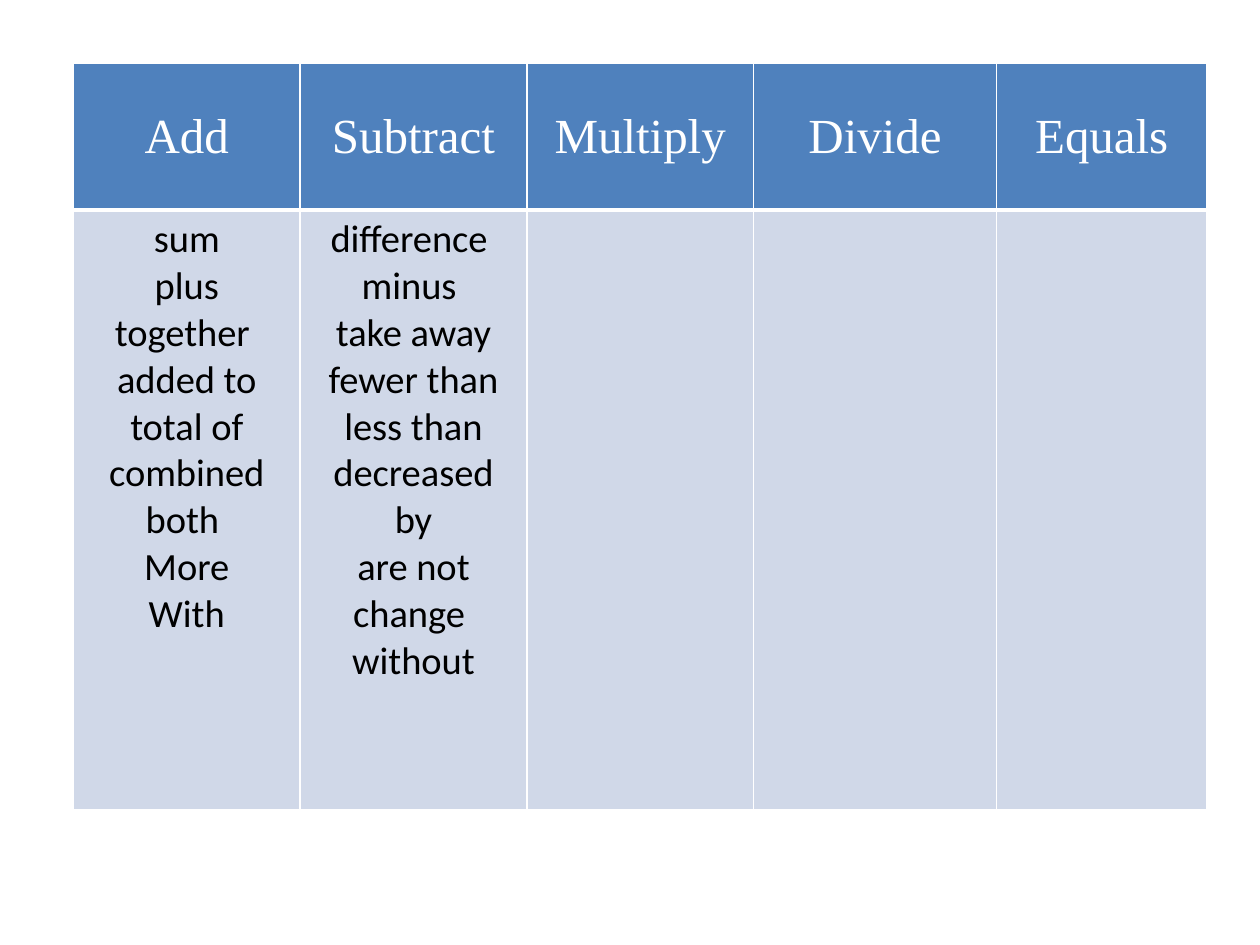
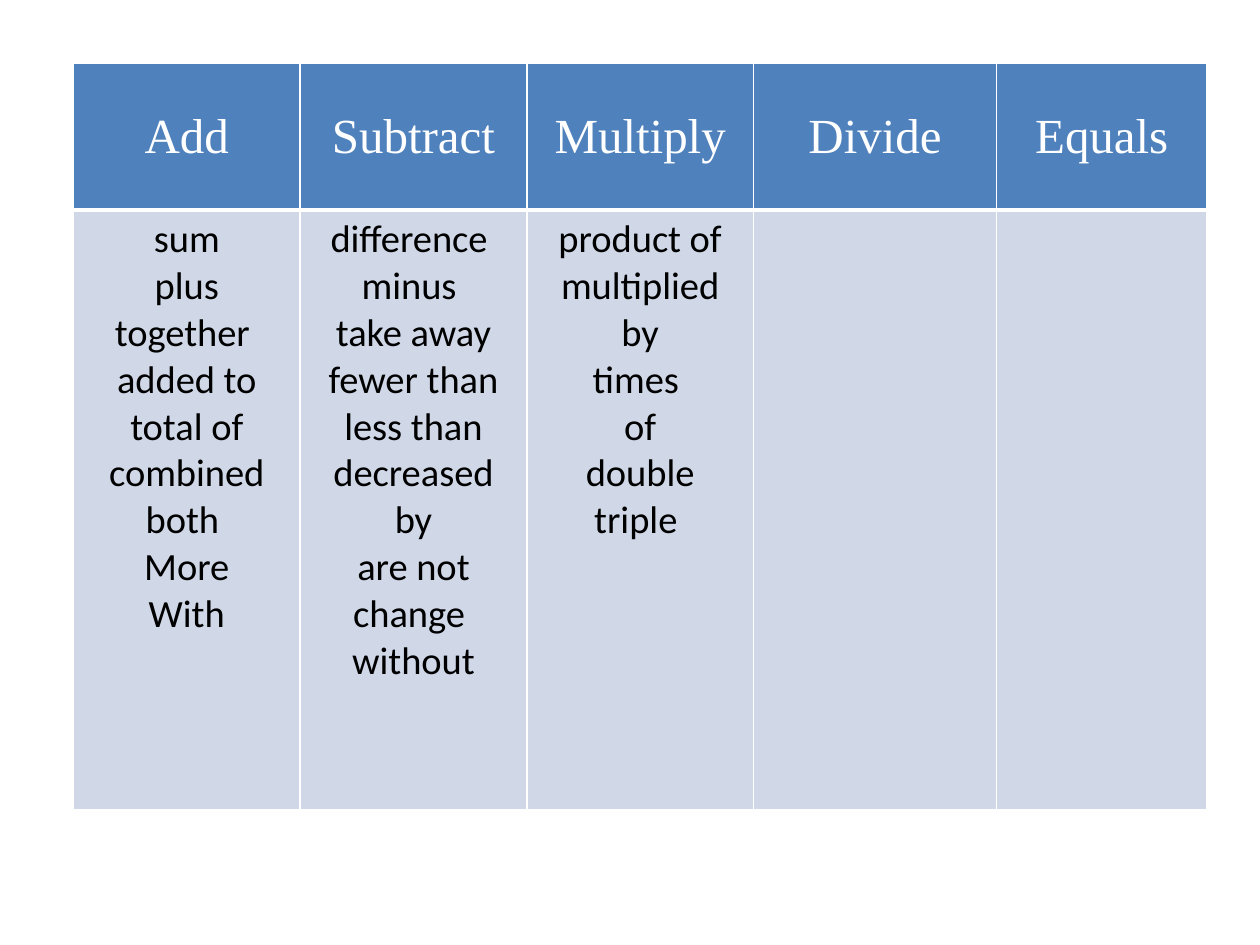
from dataclasses import dataclass

from lxml import etree
from pptx import Presentation
from pptx.dml.color import RGBColor
from pptx.enum.text import MSO_ANCHOR, PP_ALIGN
from pptx.oxml.ns import qn
from pptx.util import Cm, Pt

CENTER = PP_ALIGN.CENTER
TOP = MSO_ANCHOR.TOP
MIDDLE = MSO_ANCHOR.MIDDLE

WHITE = "FFFFFF"
BLACK = "000000"
BLUE = "4F81BD"
PALE_BLUE = "D0D8E8"

BLANK_LAYOUT = 6
TABLE_LEFT, TABLE_TOP = Cm(1.48), Cm(1.27)
COLUMN_WIDTHS = [Cm(4.57), Cm(4.57), Cm(4.57), Cm(4.9), Cm(4.24)]
ROW_HEIGHTS = [Cm(2.96), Cm(12.1)]
EMU_PER_POINT = 12700


@dataclass(frozen=True)
class CellStyle:
    fill: str
    color: str
    font: str
    size: int
    anchor: MSO_ANCHOR
    bottom_border: int


HEADER = CellStyle(BLUE, WHITE, "Times New Roman", 28, MIDDLE, 3)
BODY = CellStyle(PALE_BLUE, BLACK, "Calibri", 22, TOP, 1)

OPERATIONS = ["Add", "Subtract", "Multiply", "Divide", "Equals"]
ADD_WORDS = ["sum", "plus", "together ", "added to", "total of", "combined",
             "both ", "More", "With"]
SUBTRACT_WORDS = ["difference ", "minus ", "take away", "fewer than", "less than",
                  "decreased by", "are not", "change ", "without"]
MULTIPLY_WORDS = ["product of", "multiplied by", "times ", "of", "double", "triple "]

SLIDE_WORDS = [
    [ADD_WORDS, SUBTRACT_WORDS, [], [], []],
    [ADD_WORDS, SUBTRACT_WORDS, MULTIPLY_WORDS, [], []],
]


def rgb(color: str) -> RGBColor:
    return RGBColor.from_string(color)


def add_border(cell, side: str, points: int) -> None:
    properties = cell._tc.get_or_add_tcPr()
    line = etree.SubElement(properties, qn(f"a:ln{side}"), w=str(points * EMU_PER_POINT))
    fill = etree.SubElement(line, qn("a:solidFill"))
    etree.SubElement(fill, qn("a:srgbClr"), val=WHITE)


def fill_cell(cell, lines: list[str], style: CellStyle) -> None:
    for side in "LRT":
        add_border(cell, side, 1)
    add_border(cell, "B", style.bottom_border)
    cell.fill.solid()
    cell.fill.fore_color.rgb = rgb(style.fill)
    cell.vertical_anchor = style.anchor
    cell.text_frame.text = "\n".join(lines)
    for para in cell.text_frame.paragraphs:
        para.alignment = CENTER
        for span in para.runs:
            span.font.name = style.font
            span.font.size = Pt(style.size)
            span.font.color.rgb = rgb(style.color)


def add_word_table(page, word_lists: list[list[str]]) -> None:
    frame = page.shapes.add_table(
        len(ROW_HEIGHTS), len(COLUMN_WIDTHS), TABLE_LEFT, TABLE_TOP,
        sum(COLUMN_WIDTHS), sum(ROW_HEIGHTS))
    table = frame.table
    table.first_row = False
    table.horz_banding = False
    for column, width in zip(table.columns, COLUMN_WIDTHS):
        column.width = width
    for row, height in zip(table.rows, ROW_HEIGHTS):
        row.height = height
    for index, (operation, words) in enumerate(zip(OPERATIONS, word_lists)):
        fill_cell(table.cell(0, index), [operation], HEADER)
        fill_cell(table.cell(1, index), words, BODY)


def main() -> None:
    deck = Presentation()
    deck.slide_width = Cm(25.4)
    deck.slide_height = Cm(19.05)
    for word_lists in SLIDE_WORDS:
        page = deck.slides.add_slide(deck.slide_layouts[BLANK_LAYOUT])
        add_word_table(page, word_lists)
    deck.save("out.pptx")


if __name__ == "__main__":
    main()
